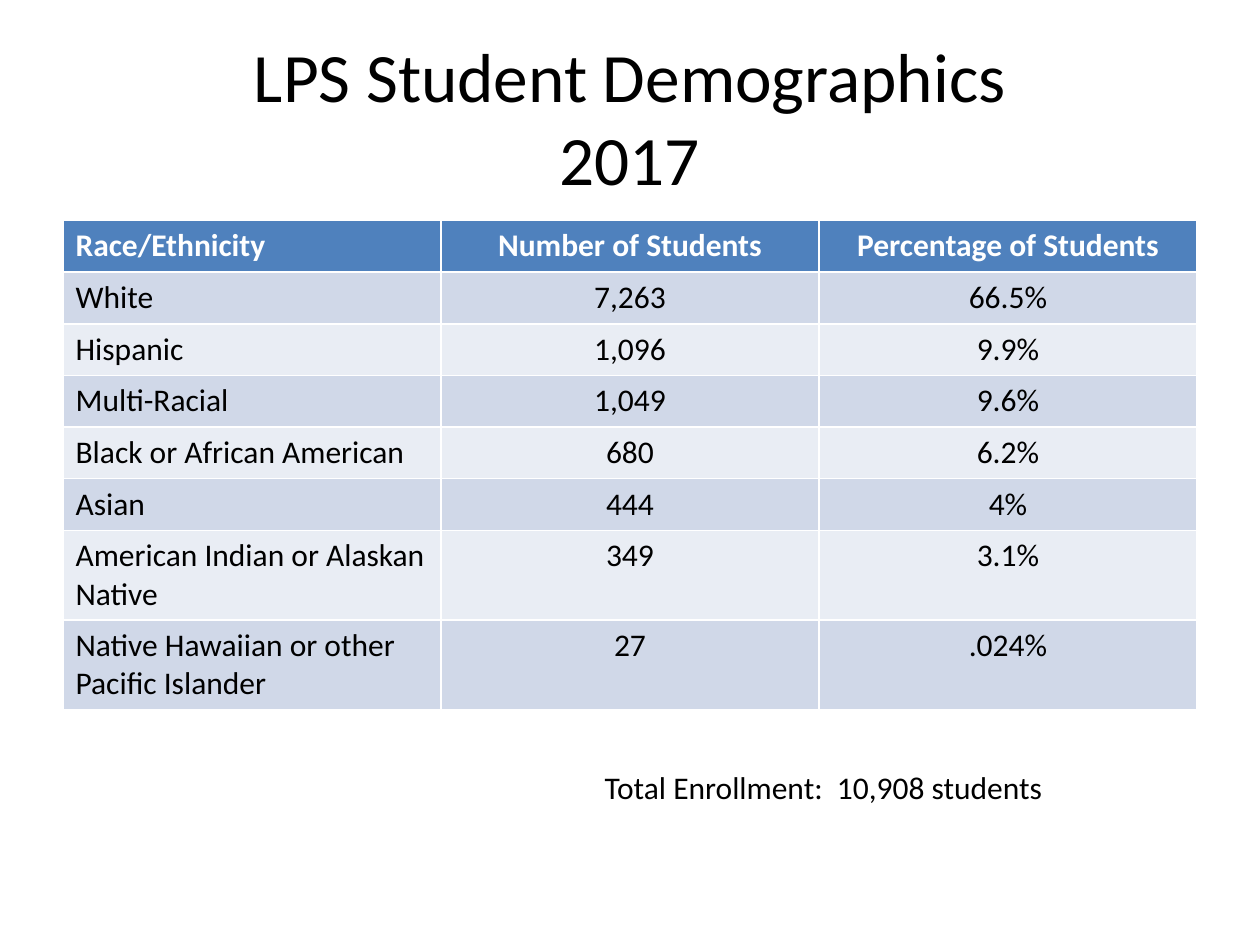
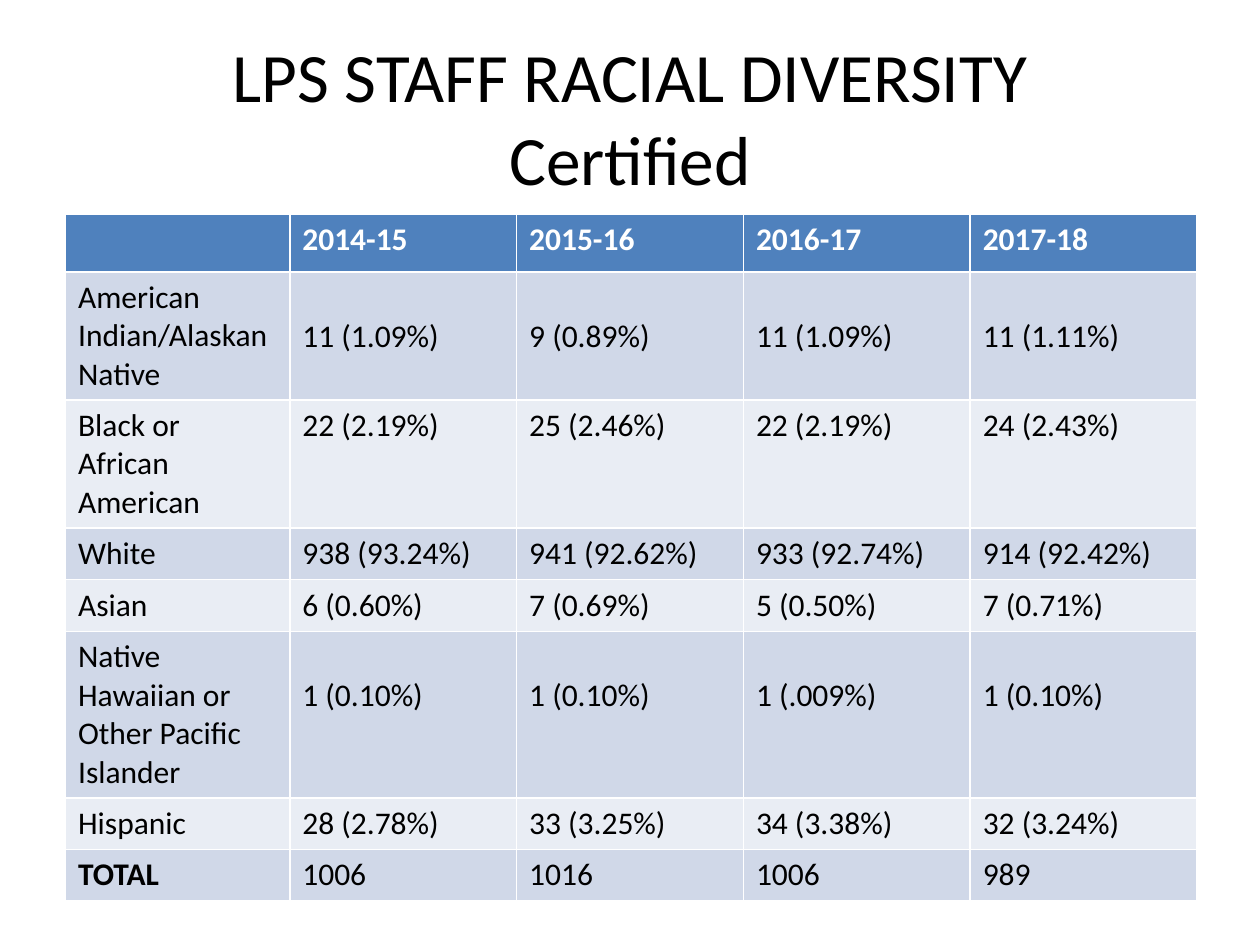
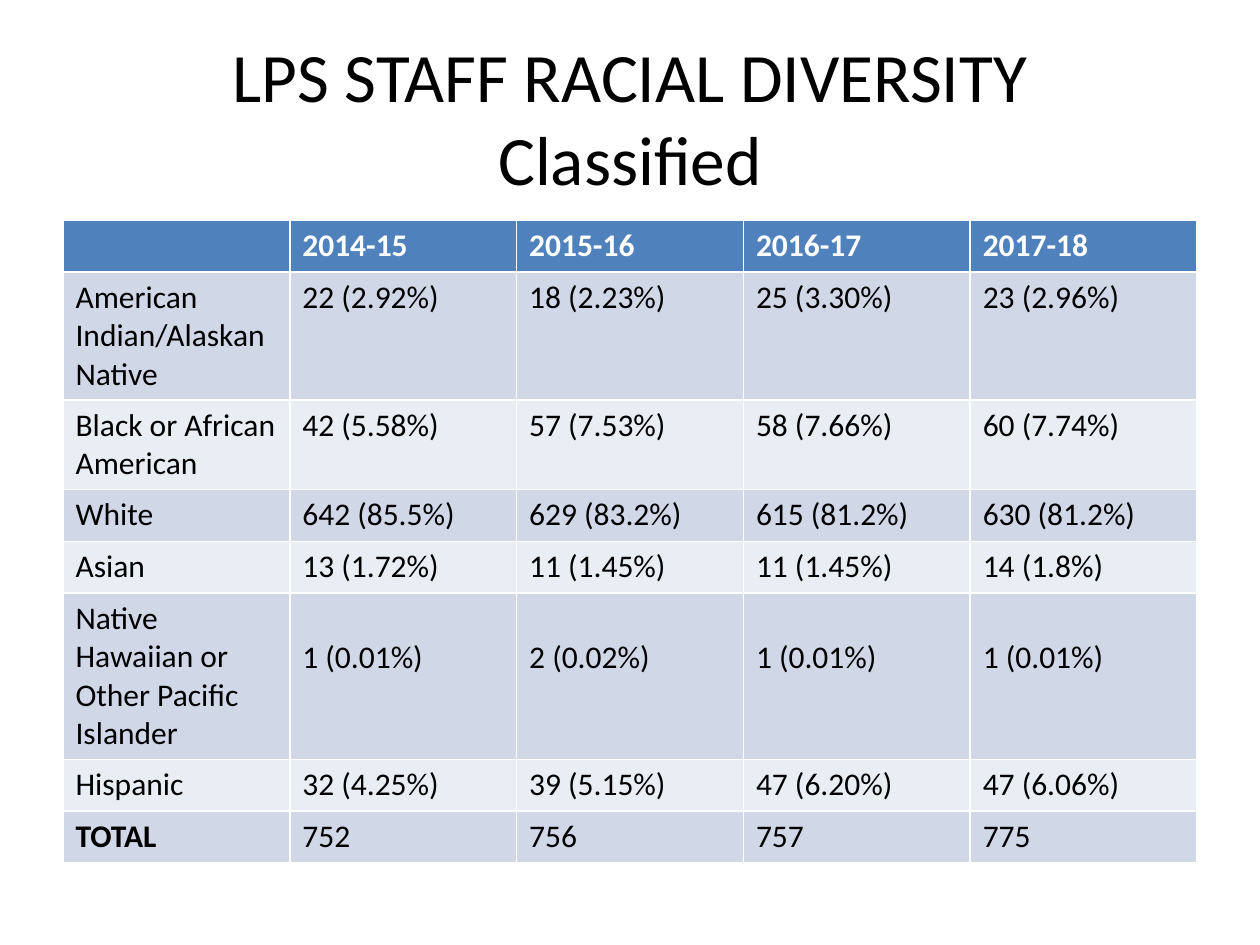
from pptx import Presentation
from pptx.dml.color import RGBColor
from pptx.enum.text import MSO_ANCHOR, MSO_AUTO_SIZE, PP_ALIGN
from pptx.util import Inches, Pt

BLACK = RGBColor(0x00, 0x00, 0x00)
WHITE = RGBColor(0xFF, 0xFF, 0xFF)
HEADER = RGBColor(0x4F, 0x81, 0xBD)
BANDS = [RGBColor(0xE9, 0xED, 0xF4), RGBColor(0xD0, 0xD8, 0xE8)]
ROW_H = 0.41
LOWERED = 0.36

TITLE_FONT = {"name": "Calibri", "size": Pt(39.6)}
BODY_FONT = {"name": "Calibri", "size": Pt(18), "bold": False}
YEARS = ["", "2014-15", "2015-16", "2016-17", "2017-18"]

SLIDES = [
    {
        "title": "LPS Student Demographics\v2017",
        "at": (0.5, 1.75),
        "cols": [3] * 3,
        "head_h": ROW_H,
        "align": PP_ALIGN.CENTER,
        "lowered": [],
        "rows": [
            ["Race/Ethnicity", "Number of Students", "Percentage of Students"],
            ["White", "7,263", "66.5%"],
            ["Hispanic", "1,096", "9.9%"],
            ["Multi-Racial", "1,049", "9.6%"],
            ["Black or African American", "680", "6.2%"],
            ["Asian", "444", "4%"],
            ["American Indian or Alaskan Native", "349", "3.1%"],
            ["Native Hawaiian or other Pacific Islander", "27", ".024%"],
        ],
        "note": "Total Enrollment:  10,908 students",
    },
    {
        "title": "LPS STAFF RACIAL DIVERSITY\vCertified",
        "at": (0.52, 1.7),
        "cols": [1.78] + [1.8] * 4,
        "head_h": 0.46,
        "align": PP_ALIGN.LEFT,
        "lowered": [1, 5],
        "rows": [
            YEARS,
            ["American Indian/Alaskan Native", "11 (1.09%)", "9 (0.89%)", "11 (1.09%)", "11 (1.11%)"],
            ["Black or African American", "22 (2.19%)", "25 (2.46%)", "22 (2.19%)", "24 (2.43%)"],
            ["White", "938 (93.24%)", "941 (92.62%)", "933 (92.74%)", "914 (92.42%)"],
            ["Asian", "6 (0.60%)", "7 (0.69%)", "5 (0.50%)", "7 (0.71%)"],
            ["Native Hawaiian or Other Pacific Islander", "1 (0.10%)", "1 (0.10%)", "1 (.009%)", "1 (0.10%)"],
            ["Hispanic", "28 (2.78%)", "33 (3.25%)", "34 (3.38%)", "32 (3.24%)"],
            ["TOTAL", "1006", "1016", "1006", "989"],
        ],
    },
    {
        "title": "LPS STAFF RACIAL DIVERSITY\vClassified",
        "at": (0.5, 1.75),
        "cols": [1.8] * 5,
        "head_h": ROW_H,
        "align": PP_ALIGN.LEFT,
        "lowered": [5],
        "rows": [
            YEARS,
            ["American Indian/Alaskan Native", "22 (2.92%)", "18 (2.23%)", "25 (3.30%)", "23 (2.96%)"],
            ["Black or African American", "42 (5.58%)", "57 (7.53%)", "58 (7.66%)", "60 (7.74%)"],
            ["White", "642 (85.5%)", "629 (83.2%)", "615 (81.2%)", "630 (81.2%)"],
            ["Asian", "13 (1.72%)", "11 (1.45%)", "11 (1.45%)", "14 (1.8%)"],
            ["Native Hawaiian or Other Pacific Islander", "1 (0.01%)", "2 (0.02%)", "1 (0.01%)", "1 (0.01%)"],
            ["Hispanic", "32 (4.25%)", "39 (5.15%)", "47 (6.20%)", "47 (6.06%)"],
            ["TOTAL", "752", "756", "757", "775"],
        ],
    },
]


def write(tf, text, fmt, color, align):
    p = tf.paragraphs[0]
    p.text = text
    p.alignment = align
    for r in p.runs:
        for key, value in fmt.items():
            setattr(r.font, key, value)
        r.font.color.rgb = color


prs = Presentation()
prs.slide_width = Inches(10)
prs.slide_height = Inches(7.5)

for data in SLIDES:
    s = prs.slides.add_slide(prs.slide_layouts[5])
    sp = s.shapes.title
    sp.left, sp.top, sp.width, sp.height = [Inches(v) for v in (0.5, 0.3, 9, 1.25)]
    tf = sp.text_frame
    tf.auto_size = MSO_AUTO_SIZE.NONE
    tf.vertical_anchor = MSO_ANCHOR.MIDDLE
    write(tf, data["title"], TITLE_FONT, BLACK, PP_ALIGN.CENTER)

    rows, cols = data["rows"], data["cols"]
    left, top = data["at"]
    heights = [data["head_h"]] + [ROW_H] * (len(rows) - 1)
    table = s.shapes.add_table(len(rows), len(cols), Inches(left), Inches(top),
                               Inches(sum(cols)), Inches(sum(heights))).table
    for col, width in zip(table.columns, cols):
        col.width = Inches(width)
    for i, row in enumerate(rows):
        table.rows[i].height = Inches(heights[i])
        for j, text in enumerate(row):
            cell = table.cell(i, j)
            cell.fill.solid()
            cell.fill.fore_color.rgb = BANDS[i % 2] if i else HEADER
            if j and i in data["lowered"]:
                cell.margin_top = Inches(LOWERED)
            fmt = {**BODY_FONT, "bold": i == 0 or text == "TOTAL"}
            write(cell.text_frame, text, fmt, BLACK if i else WHITE,
                  data["align"] if j else PP_ALIGN.LEFT)

    if "note" in data:
        sp = s.shapes.add_textbox(Inches(4.7), Inches(6.05), Inches(4.19), Inches(0.4))
        tf = sp.text_frame
        tf.word_wrap = True
        tf.auto_size = MSO_AUTO_SIZE.SHAPE_TO_FIT_TEXT
        write(tf, data["note"], BODY_FONT, BLACK, PP_ALIGN.LEFT)

prs.save("out.pptx")
